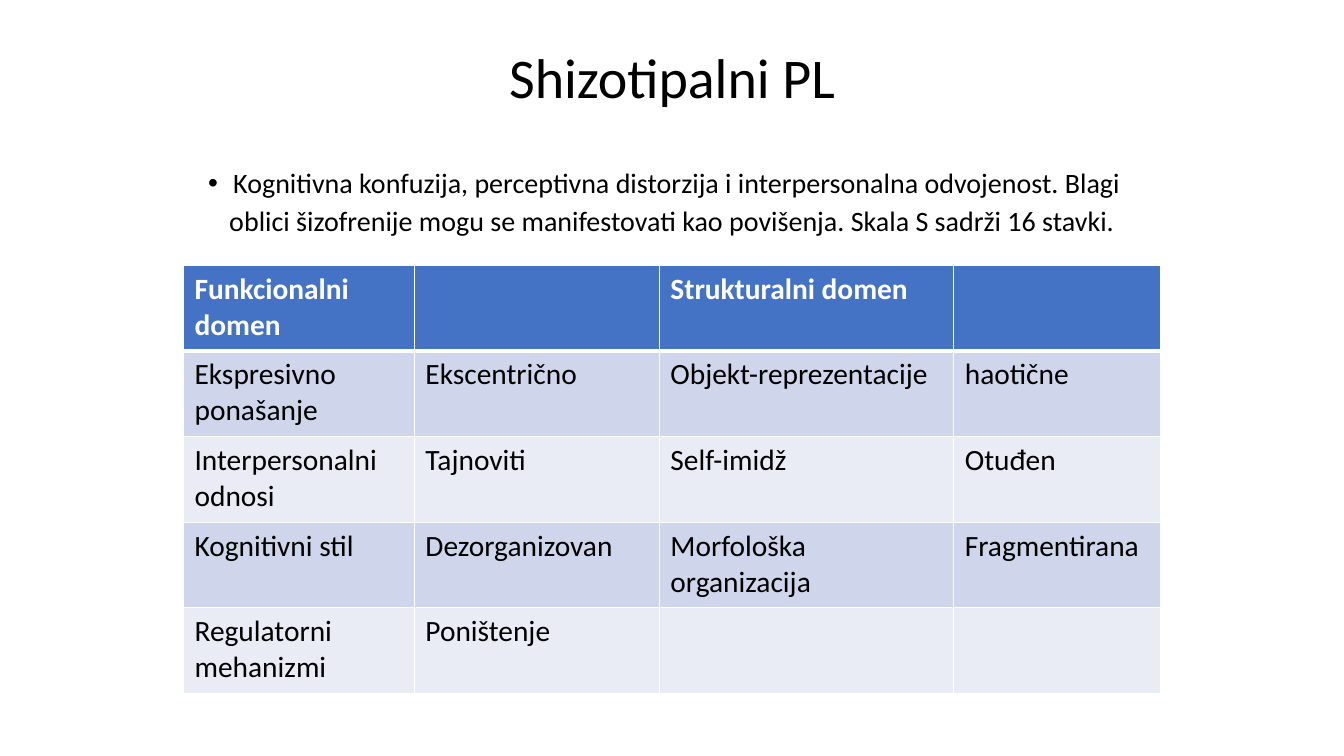
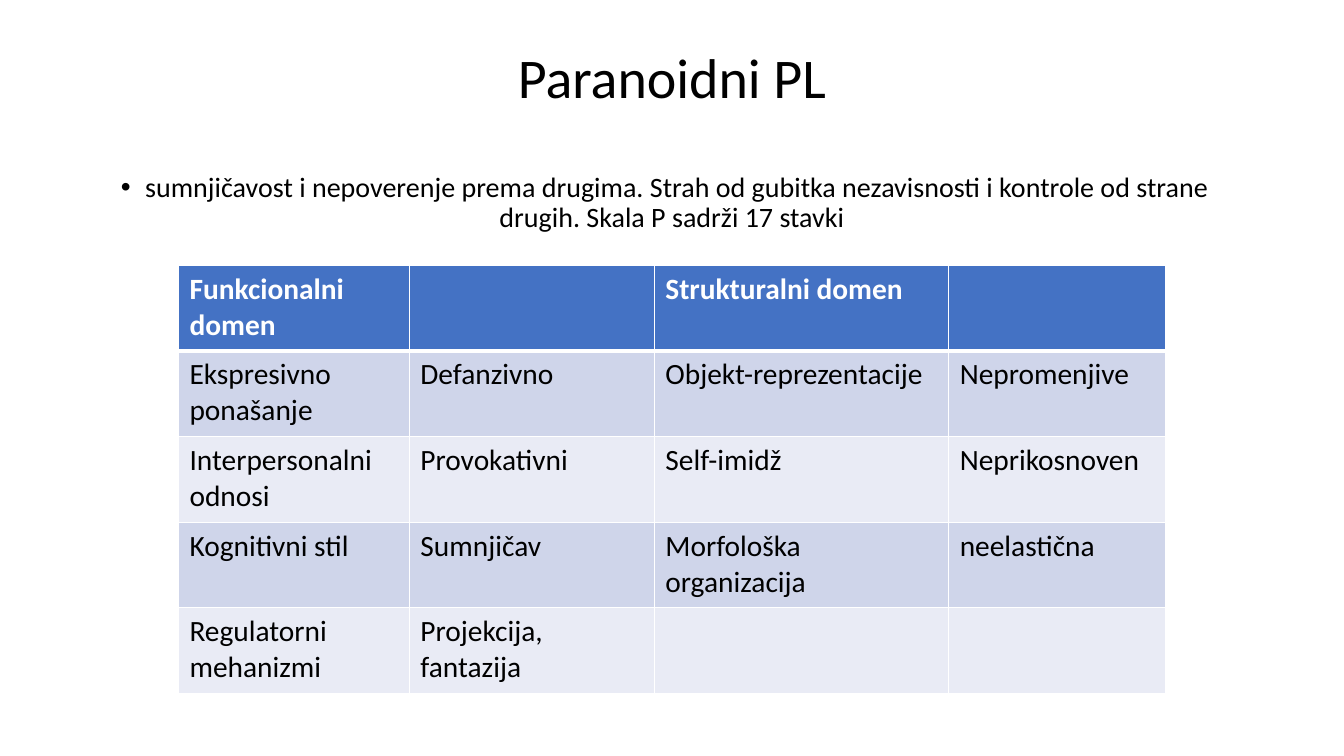
from lxml.etree import SubElement
from pptx import Presentation
from pptx.dml.color import RGBColor
from pptx.enum.text import MSO_ANCHOR, MSO_AUTO_SIZE, PP_ALIGN
from pptx.oxml.ns import qn
from pptx.util import Inches, Pt

SLIDE_W, SLIDE_H = 13.33, 7.5
FONT = "Calibri"
COLORS = {
    "text": "000000",
    "white": "FFFFFF",
    "header": "4472C4",
    "band_dark": "CFD5EA",
    "band_light": "E9EBF5",
}

# Boxes: left, top, width, height
TITLE_BOX = (1.1, 0.19, 11.13, 1.22)
SUMMARY_BOX = (1.1, 1.6, 11.13, 0.84)
TABLE_TOP, ROW_HEIGHT = 2.63, 0.85
DOMAIN_COLUMNS = [2.29, 2.43, 2.92]

TITLE_FORMAT = {"size": Pt(40), "bold": False}
SUMMARY_FORMAT = {"size": Pt(20), "bold": False}
HEADER_FORMAT = {"size": Pt(21), "bold": True}
CELL_FORMAT = {"size": Pt(21), "bold": False}
CELL_MARGINS = {"margin_left": 0.11, "margin_right": 0.11,
                "margin_top": 0.06, "margin_bottom": 0.06}

# Domain names shared by every personality table
HEADINGS = ["Funkcionalni domen", "", "Strukturalni domen", ""]
FUNCTIONAL = ["Ekspresivno ponašanje", "Interpersonalni odnosi",
              "Kognitivni stil", "Regulatorni mehanizmi"]
STRUCTURAL = ["Objekt-reprezentacije", "Self-imidž", "Morfološka organizacija", ""]

DISORDERS = [
    {
        "title": "Shizotipalni PL",
        "summary": [
            "Kognitivna konfuzija, perceptivna distorzija i interpersonalna odvojenost. Blagi",
            "oblici šizofrenije mogu se manifestovati kao povišenja. Skala S sadrži 16 stavki.",
        ],
        "functional": ["Ekscentrično", "Tajnoviti", "Dezorganizovan", "Poništenje"],
        "structural": ["haotične", "Otuđen", "Fragmentirana", ""],
        "last_column": 2.05,
    },
    {
        "title": "Paranoidni PL",
        "summary": [
            "sumnjičavost i nepoverenje prema drugima. Strah od gubitka nezavisnosti "
            "i kontrole od strane drugih. Skala P sadrži 17 stavki",
        ],
        "functional": ["Defanzivno", "Provokativni", "Sumnjičav", "Projekcija, fantazija"],
        "structural": ["Nepromenjive", "Neprikosnoven", "neelastična", ""],
        "last_column": 2.15,
    },
]


def rgb(name):
    return RGBColor.from_string(COLORS[name])


def style_font(font, formats, color):
    for attribute, value in {"name": FONT, **formats}.items():
        setattr(font, attribute, value)
    font.color.rgb = rgb(color)


def center_text(frame, lines, formats, space_after=0):
    frame.word_wrap = True
    frame.auto_size = MSO_AUTO_SIZE.NONE
    frame.vertical_anchor = MSO_ANCHOR.MIDDLE
    for index, line in enumerate(lines):
        paragraph = frame.add_paragraph() if index else frame.paragraphs[0]
        paragraph.alignment = PP_ALIGN.CENTER
        paragraph.line_spacing = 0.9
        paragraph.space_after = Pt(space_after)
        run = paragraph.add_run()
        run.text = line
        style_font(run.font, formats, "text")


def add_title(slide, text, box):
    title = slide.shapes.title
    title.left, title.top, title.width, title.height = map(Inches, box)
    center_text(title.text_frame, [text], TITLE_FORMAT)


def add_summary(slide, lines, box):
    frame = slide.shapes.add_textbox(*map(Inches, box)).text_frame
    center_text(frame, lines, SUMMARY_FORMAT, space_after=6)
    # Hanging bullet on the first line only
    properties = frame.paragraphs[0]._p.get_or_add_pPr()
    properties.set("marL", "0")
    properties.set("indent", str(Inches(-0.25)))
    SubElement(properties, qn("a:buFont"), typeface="Arial")
    SubElement(properties, qn("a:buChar"), char="•")


def add_borders(cell, row):
    widths = {"L": 1, "R": 1, "T": 3 if row == 1 else 1, "B": 3 if row == 0 else 1}
    properties = cell._tc.get_or_add_tcPr()
    for side, width in widths.items():
        line = SubElement(properties, qn(f"a:ln{side}"), w=str(Pt(width)))
        fill = SubElement(line, qn("a:solidFill"))
        SubElement(fill, qn("a:srgbClr"), val=COLORS["white"])


def fill_cell(cell, text, row):
    add_borders(cell, row)
    cell.fill.solid()
    band = "band_dark" if row % 2 else "band_light"
    cell.fill.fore_color.rgb = rgb(band if row else "header")
    for margin, value in CELL_MARGINS.items():
        setattr(cell, margin, Inches(value))
    if text:
        run = cell.text_frame.paragraphs[0].add_run()
        run.text = text
        style_font(run.font, CELL_FORMAT if row else HEADER_FORMAT,
                   "text" if row else "white")


def add_domain_table(slide, rows, columns, top):
    width, height = sum(columns), ROW_HEIGHT * len(rows)
    box = ((SLIDE_W - width) / 2, top, width, height)
    table = slide.shapes.add_table(len(rows), len(columns), *map(Inches, box)).table
    table.first_row = table.horz_banding = False
    for column, column_width in zip(table.columns, columns):
        column.width = Inches(column_width)
    for row, texts in enumerate(rows):
        table.rows[row].height = Inches(ROW_HEIGHT)
        for column, text in enumerate(texts):
            fill_cell(table.cell(row, column), text, row)


def add_disorder_slide(deck, disorder):
    slide = deck.slides.add_slide(deck.slide_layouts[5])
    add_title(slide, disorder["title"], TITLE_BOX)
    add_summary(slide, disorder["summary"], SUMMARY_BOX)
    rows = [HEADINGS, *zip(FUNCTIONAL, disorder["functional"],
                           STRUCTURAL, disorder["structural"])]
    add_domain_table(slide, rows, DOMAIN_COLUMNS + [disorder["last_column"]], TABLE_TOP)


def main():
    deck = Presentation()
    deck.slide_width, deck.slide_height = Inches(SLIDE_W), Inches(SLIDE_H)
    for disorder in DISORDERS:
        add_disorder_slide(deck, disorder)
    deck.save("out.pptx")


if __name__ == "__main__":
    main()
